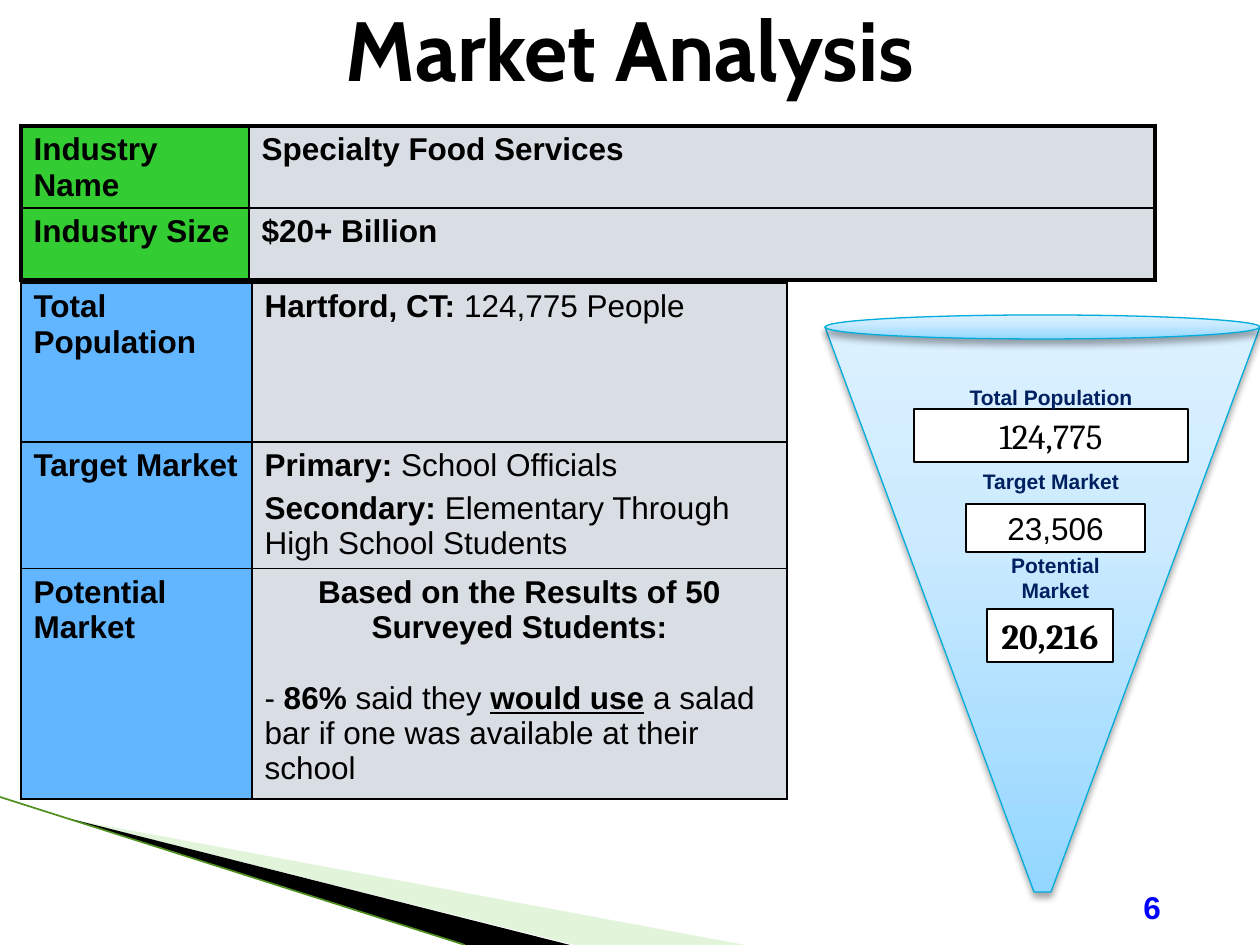
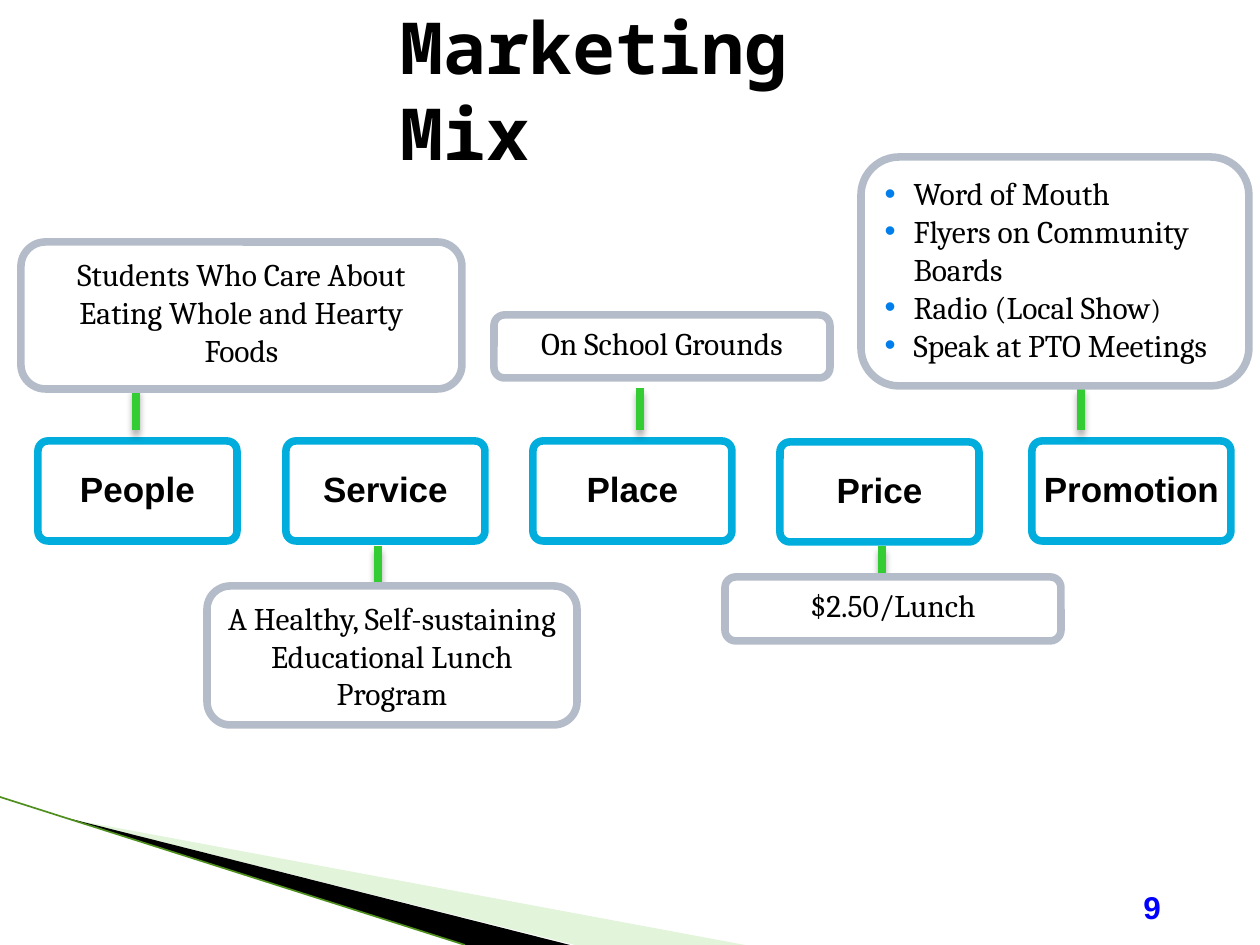
from copy import deepcopy

from lxml import etree
from pptx import Presentation
from pptx import util as u
from pptx.dml.color import RGBColor as Rgb
from pptx.enum import shapes, text
from pptx.oxml.ns import qn

S = 7257  # EMU per px, 126 px to the inch
C = dict(ink="000000", white="FFFFFF", pale="E2F4D9", edge="4F8F1E", page="0000FF",
         green="33CC33", blue="61B6FF", gray="D9DEE5", cyan="00ADDC", navy="002060",
         steel="B4BCCA", dot="007EEB")
MID, LEFT, RIGHT = text.PP_ALIGN.CENTER, text.PP_ALIGN.LEFT, text.PP_ALIGN.RIGHT
KIND = shapes.MSO_SHAPE

prs = Presentation()
prs.slide_width, prs.slide_height = 1260 * S, 945 * S


def write(frame, lines, size, font="Arial", color="ink", bold=False, align=MID, dots=False):
    """Fill a frame; *stars* mark bold runs and _bars_ mark underlined ones."""
    for i, line in enumerate(lines):
        par = frame.paragraphs[0] if i == 0 else frame.add_paragraph()
        par.alignment = align
        if dots:
            prop = par._p.get_or_add_pPr()
            prop.set("marL", str(29 * S))
            prop.set("indent", str(-29 * S))
            tint = etree.SubElement(prop, qn("a:buClr"))
            etree.SubElement(tint, qn("a:srgbClr"), val=C["dot"])
            etree.SubElement(prop, qn("a:buFont"), typeface="Arial")
            etree.SubElement(prop, qn("a:buChar"), char="•")
        par.font.size, par.font.name = u.Pt(size), font
        par.font.color.rgb = Rgb.from_string(C[color])
        parts = line.split("*")
        if len(parts) == 1:
            par.font.bold = bold
        for k, part in enumerate(parts):
            if part:
                run = par.add_run()
                run.text = part.strip("_")
                if len(parts) > 1:
                    run.font.bold = k % 2 == 1
                if part.startswith("_"):
                    run.font.underline = True


def box(page, at, kind=None, line=None, width=0.75):
    """Add a white outlined shape, or a plain text box when no kind is given."""
    at = [v * S for v in at]
    if kind is None:
        item = page.shapes.add_textbox(*at)
    else:
        item = page.shapes.add_shape(kind, *at)
        item.shadow.inherit = False
        item.fill.solid()
        item.fill.fore_color.rgb = Rgb.from_string(C["white"])
        item.line.color.rgb = Rgb.from_string(C[line])
        item.line.width = u.Pt(width)
    item.text_frame.word_wrap = True
    return item


# Shared frame: corner bands, page number, title
bands = [("pale", [(69, 819), (745, 945), (575, 945)]),
         ("ink", [(67, 818), (570, 945), (465, 945)])]
heads = [("Market Analysis", 48, "Cabin", MID, (63, 0, 1134, 95), "6"),
         ("Marketing Mix", 41, "Noto Sans Mono", LEFT, (388, 21, 546, 136), "9")]
pages = []
for name, size, font, align, at, num in heads:
    page = prs.slides.add_slide(prs.slide_layouts[5])
    pages.append(page)
    for color, pts in bands:
        pen = page.shapes.build_freeform(*pts[0], scale=S)
        pen.add_line_segments(pts[1:], close=True)
        band = pen.convert_to_shape()
        band.shadow.inherit = False
        band.fill.solid()
        band.fill.fore_color.rgb = Rgb.from_string(C[color])
        band.line.fill.background()
    rim = page.shapes.add_connector(shapes.MSO_CONNECTOR.STRAIGHT, 0, 797 * S, 465 * S, 945 * S)
    rim.line.color.rgb = Rgb.from_string(C["edge"])
    rim.line.width = u.Pt(0.95)
    etree.SubElement(rim._element.spPr, qn("a:effectLst"))

    foot = box(page, (1108, 892, 53, 29)).text_frame
    foot.margin_left = foot.margin_right = 0
    foot.vertical_anchor = text.MSO_ANCHOR.MIDDLE
    write(foot, [num], 18, color="page", bold=True, align=RIGHT)

    title = page.shapes.title
    title.left, title.top, title.width, title.height = [v * S for v in at]
    title.text_frame.auto_size = text.MSO_AUTO_SIZE.NONE
    title.text_frame.vertical_anchor = text.MSO_ANCHOR.MIDDLE
    write(title.text_frame, [name], size, font, bold=True, align=align)
market, mix = pages
lit = []  # items that cast a shadow

# Market tables: place, columns, row heights, label fill, outer border, rows
grids = [
    ((21, 126), (228, 906), (82, 72), "green", 2.25, [
        ("Industry Name", ["*Specialty Food Services*"]),
        ("Industry Size", ["*$20+ Billion*"])]),
    ((21, 283), (231, 535), (159, 125, 223), "blue", 1, [
        ("Total Population", ["*Hartford, CT: *124,775 People"]),
        ("Target Market", ["*Primary: *School Officials",
                           "*Secondary: *Elementary Through High School Students"]),
        ("Potential Market", ["*Based on the Results of 50 Surveyed Students:*",
                              "-* 86% *said they *_would use_* a salad bar if one was "
                              "available at their school"])]),
]
for (x, y), cols, highs, hue, outer, rows in grids:
    grid = market.shapes.add_table(len(rows), 2, x * S, y * S, sum(cols) * S, sum(highs) * S).table
    grid.first_row = grid.horz_banding = False
    for col, wide in zip(grid.columns, cols):
        col.width = wide * S
    for r, (label, lines) in enumerate(rows):
        grid.rows[r].height = highs[r] * S
        for c, body in enumerate([[f"*{label}*"], lines]):
            cell = grid.cell(r, c)
            cell.margin_bottom = 0
            prop = cell._tc.get_or_add_tcPr()
            rims = dict(L=c == 0, R=c == 1, T=r == 0, B=r == len(rows) - 1)
            for side, out in rims.items():
                ln = etree.SubElement(prop, qn(f"a:ln{side}"), w=str(u.Pt(outer if out else 1)))
                fill = etree.SubElement(ln, qn("a:solidFill"))
                etree.SubElement(fill, qn("a:srgbClr"), val=C["ink"])
            cell.fill.solid()
            cell.fill.fore_color.rgb = Rgb.from_string(C["gray" if c else hue])
            write(cell.text_frame, body, 18, align=LEFT)
second = grid.cell(1, 1).text_frame.paragraphs[1]
second.space_before = u.Pt(4)
survey = grid.cell(2, 1).text_frame.paragraphs
survey[0].alignment = MID
survey[1].space_before = u.Pt(20)

# Market funnel
pen = market.shapes.build_freeform(825, 327, scale=S)
pen.add_line_segments([(1034, 892), (1051, 892), (1260, 327)], close=True)
cone = pen.convert_to_shape()
lid = box(market, (825, 315, 435, 24), KIND.OVAL, "cyan")
for item in (cone, lid):
    item.shadow.inherit = False
    item.line.color.rgb = Rgb.from_string(C["cyan"])
    item.line.width = u.Pt(0.75)
    item.fill.gradient()
    item.fill.gradient_angle = 90
    stops = item._element.spPr.find(".//" + qn("a:gsLst"))
    stops.insert(1, deepcopy(stops[0]))
    shades = [(0, "93D6FF"), (0.65, "CDEBFF"), (1, "DCF1FF")]
    for stop, (pos, tint) in zip(item.fill.gradient_stops, shades):
        stop.position = pos
        stop.color.rgb = Rgb.from_string(tint)
    lit.append(item)

levels = [("Total Population", (914, 378, 274, 38), "124,775", (914, 409, 274, 53), 20, "Cambria", False),
          ("Target Market", (914, 462, 274, 38), "23,506", (966, 504, 179, 48), 18, "Arial", False),
          ("Potential Market", (966, 546, 179, 63), "20,216", (987, 609, 126, 53), 20, "Cambria", True)]
for label, spot, count, at, size, font, bold in levels:
    tally = box(market, at, KIND.FLOWCHART_PROCESS, "ink").text_frame
    tally.word_wrap = False
    tally.vertical_anchor = text.MSO_ANCHOR.MIDDLE
    write(tally, [count], size, font, bold=bold)
    write(box(market, spot).text_frame, [label], 12, color="navy", bold=True)

# Five parts of the mix
parts = [("People", 38, 441), ("Service", 286, 441), ("Place", 533, 441),
         ("Price", 780, 442), ("Promotion", 1032, 441)]
for name, x, y in parts:
    card = box(mix, (x, y, 199, 100), KIND.ROUNDED_RECTANGLE, "cyan", 4.33)
    card.adjustments[0] = 0.1
    frame = card.text_frame
    frame.margin_left = frame.margin_right = 5 * S
    frame.margin_top = frame.margin_bottom = 4 * S
    frame.vertical_anchor = text.MSO_ANCHOR.MIDDLE
    write(frame, [name], 20, bold=True)
    frame.paragraphs[0].line_spacing = 0.9

# Stems between parts and notes
for x, y in [(136, 388), (640, 388), (1081, 388), (882, 546), (378, 546)]:
    stem = mix.shapes.add_connector(shapes.MSO_CONNECTOR.STRAIGHT, x * S, (y + 42) * S, x * S, y * S)
    stem.line.color.rgb = Rgb.from_string(C["green"])
    stem.line.width = u.Pt(4.33)
    etree.SubElement(stem._element.spPr, qn("a:effectLst"))
    lit.append(stem)

# Notes
notes = [((21, 242, 441, 147), ["Students Who Care About Eating Whole and Hearty Foods"]),
         ((861, 157, 388, 229), ["Word of Mouth", "Flyers on Community Boards",
                                 "Radio (Local Show", "Speak at PTO Meetings"]),
         ((494, 315, 336, 63), ["On School Grounds"]),
         ((207, 586, 370, 139), ["A Healthy, Self-sustaining Educational Lunch Program"]),
         ((725, 577, 336, 64), ["$2.50/Lunch"])]
for at, lines in notes:
    frame = box(mix, at, KIND.ROUNDED_RECTANGLE, "steel", 4.33).text_frame
    frame.vertical_anchor = text.MSO_ANCHOR.TOP
    many = len(lines) > 1
    write(frame, lines, 18, "Cambria", align=LEFT if many else MID, dots=many)
    if many:
        end = frame.paragraphs[2].add_run()
        end.text = ")"
        end.font.size = u.Pt(16)

# Shadows
for item in lit:
    glow = item._element.spPr.find(qn("a:effectLst"))
    cast = etree.SubElement(glow, qn("a:outerShdw"), blurRad=str(u.Pt(4)), dist=str(u.Pt(3)),
                            dir="5400000", rotWithShape="0")
    tint = etree.SubElement(cast, qn("a:srgbClr"), val=C["ink"])
    etree.SubElement(tint, qn("a:alpha"), val="35000")

prs.save("out.pptx")
